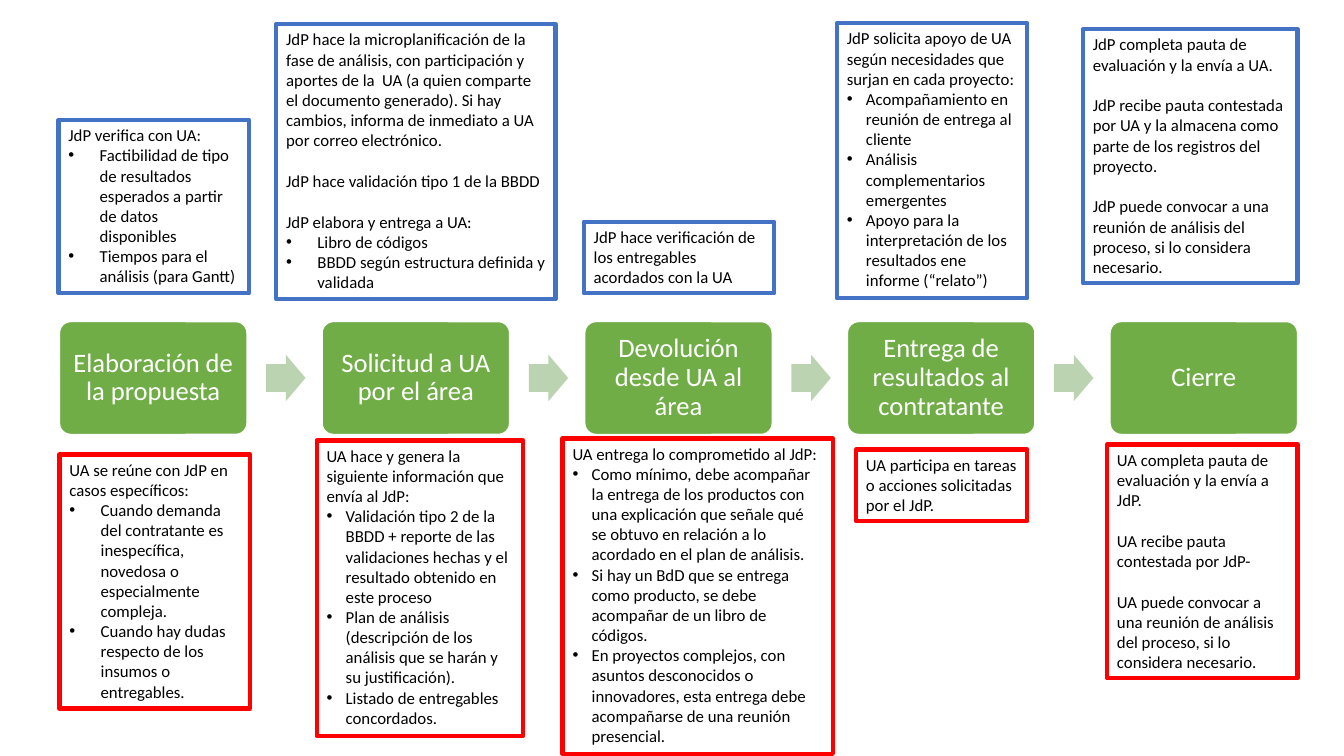
from lxml import etree
from pptx import Presentation
from pptx.dml.color import RGBColor
from pptx.enum.shapes import MSO_SHAPE
from pptx.enum.text import MSO_ANCHOR, MSO_AUTO_SIZE, PP_ALIGN
from pptx.oxml.ns import qn
from pptx.util import Inches, Pt

ROUNDED = MSO_SHAPE.ROUNDED_RECTANGLE
ARROW = MSO_SHAPE.RIGHT_ARROW
MIDDLE = MSO_ANCHOR.MIDDLE
GROW = MSO_AUTO_SIZE.SHAPE_TO_FIT_TEXT
CENTER = PP_ALIGN.CENTER

FONT = "Calibri"
COLORS = {
    "step": "70AD47",
    "arrow": "BBD3B1",
    "jdp": "4472C4",
    "ua": "FF0000",
    "white": "FFFFFF",
    "text": "000000",
}

# Process row: position of the first step and distance between steps
STEP_LEFT, STEP_TOP, STEP_WIDTH, STEP_HEIGHT = 0.59, 3.19, 1.86, 1.12
STEP_PITCH = (11.01 - STEP_LEFT) / 4
ARROW_OFFSET, ARROW_TOP, ARROW_WIDTH, ARROW_HEIGHT = 2.05, 3.52, 0.39, 0.46

NOTE_SIZE = 12
SECTION_GAP = 14.65  # one line of note text
WIDE, NARROW = 0.31, 0.19  # bullet indents

STEPS = [
    "Elaboración de la propuesta",
    "Solicitud a UA por el área",
    "Devolución desde UA al área",
    "Entrega de resultados al contratante",
    "Cierre",
]

# Each note: left, top, width, height, bullet indent, sections of lines.
# Lines that start with "•" are bullets; sections are set apart by a gap.
JDP_NOTES = [
    (0.58, 1.19, 1.89, 1.72, WIDE, [[
        "JdP verifica con UA:",
        "•Factibilidad de tipo de resultados esperados a partir de datos disponibles",
        "•Tiempos para el análisis (para Gantt)"]]),
    (2.74, 0.24, 2.77, 2.73, WIDE, [
        ["JdP hace la microplanificación de la fase de análisis, con participación y "
         "aportes de la  UA (a quien comparte el documento generado). Si hay cambios, "
         "informa de inmediato a UA por correo electrónico."],
        ["JdP hace validación tipo 1 de la BBDD"],
        ["JdP elabora y entrega a UA:",
         "•Libro de códigos",
         "•BBDD según estructura definida y validada"]]),
    (5.79, 2.2, 1.89, 0.71, WIDE, [[
        "JdP hace verificación de los entregables acordados con la UA"]]),
    (8.3, 0.23, 1.89, 2.73, NARROW, [[
        "JdP solicita apoyo de UA según necesidades que surjan en cada proyecto:",
        "•Acompañamiento en reunión de entrega al cliente",
        "•Análisis complementarios emergentes",
        "•Apoyo para la interpretación de los resultados ene informe (“relato”)"]]),
    (10.74, 0.29, 2.13, 2.52, WIDE, [
        ["JdP completa pauta de evaluación y la envía a UA."],
        ["JdP recibe pauta contestada por UA y la almacena como parte de los "
         "registros del proyecto."],
        ["JdP puede convocar a una reunión de análisis del proceso, si lo considera "
         "necesario."]]),
]

UA_NOTES = [
    (0.59, 4.51, 1.89, 2.52, WIDE, [[
        "UA se reúne con JdP en casos específicos:",
        "•Cuando demanda del contratante es inespecífica, novedosa o especialmente "
        "compleja.",
        "•Cuando hay dudas respecto de los insumos o entregables."]]),
    (3.14, 4.37, 2.05, 2.93, NARROW, [[
        "UA hace y genera la siguiente información que envía al JdP:",
        "•Validación tipo 2 de la BBDD + reporte de las validaciones hechas y el "
        "resultado obtenido en este proceso",
        "•Plan de análisis (descripción de los análisis que se harán y su "
        "justificación).",
        "•Listado de entregables concordados."]]),
    (5.58, 4.35, 2.68, 3.13, NARROW, [[
        "UA entrega lo comprometido al JdP:",
        "•Como mínimo, debe acompañar la entrega de los productos con una explicación "
        "que señale qué se obtuvo en relación a lo acordado en el plan de análisis.",
        "•Si hay un BdD que se entrega como producto, se debe acompañar de un libro "
        "de códigos.",
        "•En proyectos complejos, con asuntos desconocidos o innovadores, esta entrega "
        "debe acompañarse de una reunión presencial."]]),
    (8.49, 4.46, 1.7, 0.71, WIDE, [[
        "UA participa en tareas o acciones solicitadas por el JdP."]]),
    (10.98, 4.41, 1.89, 2.32, WIDE, [
        ["UA completa pauta de evaluación y la envía a JdP."],
        ["UA recibe pauta contestada por JdP-"],
        ["UA puede convocar a una reunión de análisis del proceso, si lo considera "
         "necesario."]]),
]


def color(name):
    return RGBColor.from_string(COLORS[name])


def box(lengths):
    return [Inches(length) for length in lengths]


def format_text(paragraph, size, color_name):
    for run in paragraph.runs:
        run.font.name = FONT
        run.font.size = Pt(size)
        run.font.color.rgb = color(color_name)


def add_bullet(paragraph, indent):
    properties = paragraph._p.get_or_add_pPr()
    properties.set("marL", str(Inches(indent)))
    properties.set("indent", str(-Inches(indent)))
    etree.SubElement(properties, qn("a:buFont")).set("typeface", "Arial")
    etree.SubElement(properties, qn("a:buChar")).set("char", "•")


def add_filled(slide, kind, place, fill_name, adjustments):
    shape = slide.shapes.add_shape(kind, *box(place))
    shape.shadow.inherit = False
    shape.fill.solid()
    shape.fill.fore_color.rgb = color(fill_name)
    for index, value in enumerate(adjustments):
        shape.adjustments[index] = value
    return shape


def add_step(slide, left, label):
    place = (left, STEP_TOP, STEP_WIDTH, STEP_HEIGHT)
    step = add_filled(slide, ROUNDED, place, "step", [0.1])
    step.line.color.rgb = color("white")
    step.line.width = Pt(1)
    frame = step.text_frame
    frame.word_wrap = True
    frame.vertical_anchor = MIDDLE
    frame.margin_left = frame.margin_right = Inches(0.08)
    frame.margin_top = frame.margin_bottom = Inches(0.08)
    frame.text = label
    paragraph = frame.paragraphs[0]
    paragraph.alignment = CENTER
    paragraph.line_spacing = 0.9
    format_text(paragraph, 19, "white")


def add_arrow(slide, left):
    place = (left, ARROW_TOP, ARROW_WIDTH, ARROW_HEIGHT)
    arrow = add_filled(slide, ARROW, place, "arrow", [0.6, 0.5])
    arrow.line.fill.background()


def add_note(slide, border_name, left, top, width, height, indent, sections):
    note = slide.shapes.add_textbox(*box((left, top, width, height)))
    note.line.color.rgb = color(border_name)
    note.line.width = Pt(3)
    frame = note.text_frame
    frame.word_wrap = True
    frame.auto_size = GROW
    frame.text = "\n".join(line.lstrip("•") for lines in sections for line in lines)
    paragraphs = iter(frame.paragraphs)
    for section, lines in enumerate(sections):
        for position, line in enumerate(lines):
            paragraph = next(paragraphs)
            if section and position == 0:
                paragraph.space_before = Pt(SECTION_GAP)
            if line.startswith("•"):
                add_bullet(paragraph, indent)
            format_text(paragraph, NOTE_SIZE, "text")


def main():
    deck = Presentation()
    deck.slide_width, deck.slide_height = box((13.33, 7.5))
    slide = deck.slides.add_slide(deck.slide_layouts[6])

    # Process steps with arrows between them
    for index, label in enumerate(STEPS):
        left = STEP_LEFT + index * STEP_PITCH
        add_step(slide, left, label)
        if index < len(STEPS) - 1:
            add_arrow(slide, left + ARROW_OFFSET)

    # Tasks of the project lead above, tasks of the analysis unit below
    for border_name, notes in (("jdp", JDP_NOTES), ("ua", UA_NOTES)):
        for note in notes:
            add_note(slide, border_name, *note)

    deck.save("out.pptx")


if __name__ == "__main__":
    main()
